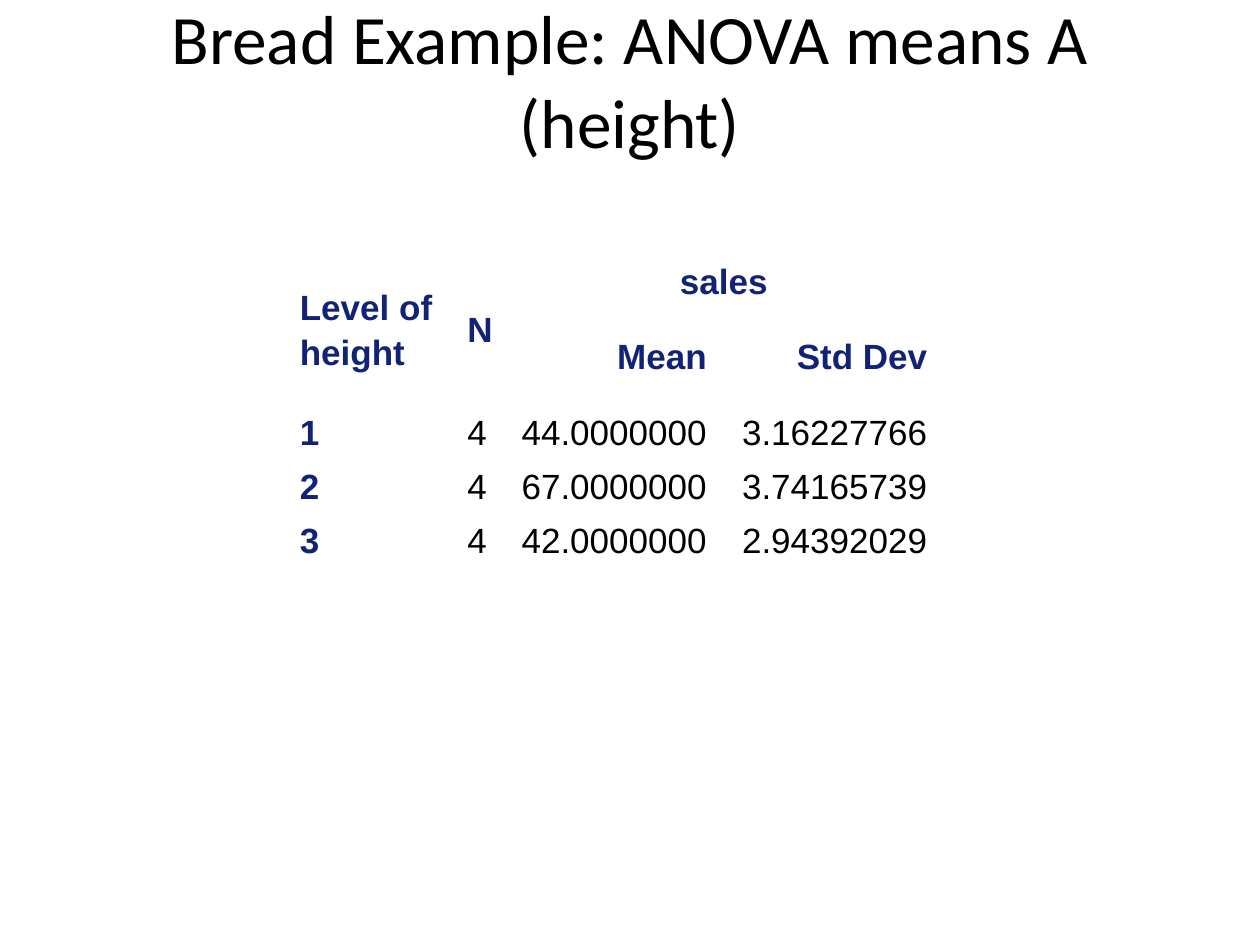
"""Build the slide with the bread example's ANOVA means by height."""
from pptx import Presentation
from pptx.dml.color import RGBColor as RGB
from pptx.enum.text import MSO_ANCHOR as Anchor, PP_ALIGN as Align
from pptx.util import Inches, Pt

BLACK = RGB(0x00, 0x00, 0x00)
NAVY = RGB(0x11, 0x22, 0x77)
WIDTHS = (1.33, 0.42, 1.58, 1.75)
HEIGHTS = (0.43, 0.71, 0.43, 0.43, 0.43)
ROWS = (
    ("Level of height", "N", "sales", ""),
    ("", "", "Mean", "Std Dev"),
    ("1", "4", "44.0000000", "3.16227766"),
    ("2", "4", "67.0000000", "3.74165739"),
    ("3", "4", "42.0000000", "2.94392029"),
)
HEADS = 2
SPANS = ((0, 0, 1, 0), (0, 1, 1, 1), (0, 2, 0, 3))


def write(frame, text, *, font, size, color=BLACK, bold=False,
          align=Align.LEFT, line=None, after=None):
    frame.word_wrap = True
    para = frame.paragraphs[0]
    para.alignment = align
    para.line_spacing = line
    para.space_after = after
    run = para.add_run()
    run.text = text
    run.font.name = font
    run.font.size = Pt(size)
    run.font.bold = bold
    run.font.color.rgb = color


class Deck:
    def __init__(self):
        self.prs = Presentation()
        self.prs.slide_width = Inches(10)
        self.prs.slide_height = Inches(7.5)
        self.slide = self.prs.slides.add_slide(self.prs.slide_layouts[6])
        self.head = dict(font="Calibri", size=39.6, align=Align.CENTER)
        self.body = dict(font="Arial", size=20, line=1.15, after=Pt(5))

    def title(self, text, *box):
        frame = self.slide.shapes.add_textbox(*map(Inches, box)).text_frame
        frame.vertical_anchor = Anchor.MIDDLE
        write(frame, text, **self.head)

    def table(self, rows, left, top):
        size = map(Inches, (left, top, sum(WIDTHS), sum(HEIGHTS)))
        grid = self.slide.shapes.add_table(len(rows), len(WIDTHS), *size).table
        grid.first_row = grid.horz_banding = False
        for col, width in zip(grid.columns, WIDTHS):
            col.width = Inches(width)
        for row, height in zip(grid.rows, HEIGHTS):
            row.height = Inches(height)
        for r1, c1, r2, c2 in SPANS:
            grid.cell(r1, c1).merge(grid.cell(r2, c2))
        for r, row in enumerate(rows):
            for c, text in enumerate(row):
                self.cell(grid.cell(r, c), text, r, c)

    def cell(self, cell, text, r, c):
        cell.fill.background()
        cell.vertical_anchor = Anchor.MIDDLE
        cell.margin_left = cell.margin_right = Inches(0.05)
        cell.margin_top = cell.margin_bottom = 0
        if not text:
            return
        label = r < HEADS or c == 0
        align = Align.LEFT if c < 2 else Align.RIGHT
        if cell.span_width > 1:
            align = Align.CENTER
        write(cell.text_frame, text, color=NAVY if label else BLACK,
              bold=label, align=align, **self.body)


def main():
    deck = Deck()
    deck.title("Bread Example: ANOVA means A (height)", 0.5, 0, 9, 1.25)
    deck.table(ROWS, 2.33, 2)
    deck.prs.save("out.pptx")


if __name__ == "__main__":
    main()
